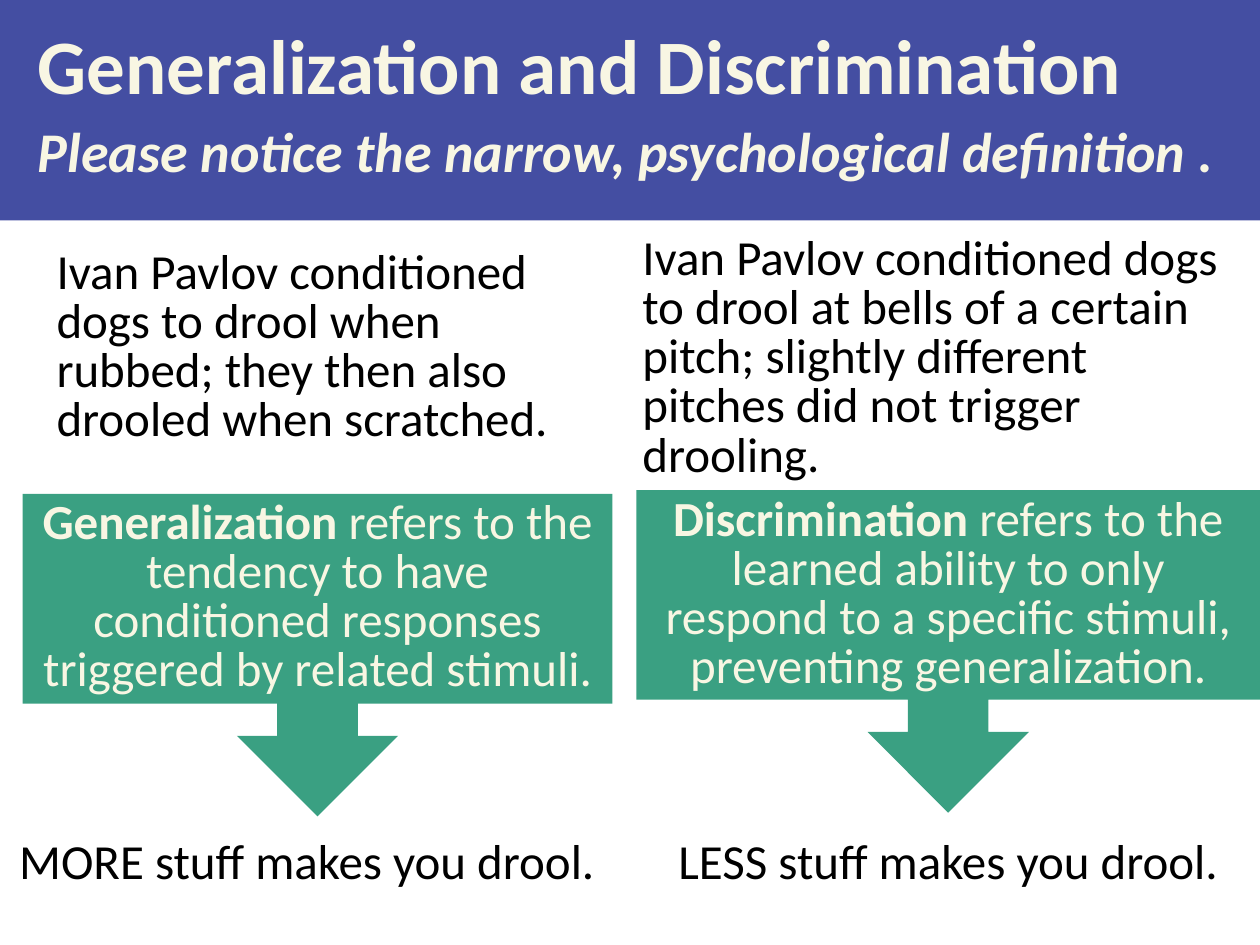
from dataclasses import dataclass

from pptx import Presentation
from pptx.dml.color import RGBColor
from pptx.enum.shapes import MSO_SHAPE
from pptx.enum.text import MSO_ANCHOR, MSO_AUTO_SIZE, PP_ALIGN
from pptx.shapes.autoshape import Shape
from pptx.slide import Slide
from pptx.util import Inches, Pt

BLUE = RGBColor(0x44, 0x4E, 0xA2)
GREEN = RGBColor(0x3A, 0xA0, 0x82)
CREAM = RGBColor(0xF8, 0xF6, 0xE3)
BLACK = RGBColor(0x00, 0x00, 0x00)
FONT = "Calibri"


@dataclass(frozen=True)
class Box:
    left: float
    top: float
    width: float
    height: float

    def lengths(self) -> tuple:
        return tuple(map(Inches, (self.left, self.top, self.width, self.height)))


@dataclass(frozen=True)
class TextPart:
    text: str
    size: float = 28
    bold: bool = False
    italic: bool = False


@dataclass(frozen=True)
class Concept:
    example: str
    example_box: Box
    term: str
    definition: str
    callout_box: Box
    result: str
    result_box: Box


CONCEPTS = [
    Concept(
        "Ivan Pavlov conditioned dogs to drool when rubbed; "
        "they then also drooled when scratched.",
        Box(0.35, 1.94, 4.42, 1.89),
        "Generalization ",
        "refers to the tendency to have conditioned responses "
        "triggered by related stimuli.",
        Box(0.18, 3.92, 4.68, 2.56),
        "MORE stuff makes you drool.",
        Box(0, 6.62, 4.87, 0.5),
    ),
    Concept(
        "Ivan Pavlov conditioned dogs to drool at bells of a certain pitch; "
        "slightly different pitches did not trigger drooling.",
        Box(5, 1.83, 4.83, 2.08),
        "Discrimination ",
        "refers to the learned ability to only respond to a specific stimuli, "
        "preventing generalization.",
        Box(5.05, 3.89, 4.95, 2.56),
        "LESS stuff makes you drool.",
        Box(5.14, 6.62, 4.77, 0.5),
    ),
]


def write_text(shape: Shape, parts: list[TextPart], color: RGBColor,
               alignment: PP_ALIGN, anchor: MSO_ANCHOR, line_spacing: float = 28) -> None:
    text_frame = shape.text_frame
    text_frame.word_wrap = True
    text_frame.auto_size = MSO_AUTO_SIZE.NONE
    text_frame.vertical_anchor = anchor
    paragraph = text_frame.paragraphs[0]
    paragraph.alignment = alignment
    paragraph.line_spacing = Pt(line_spacing)
    for part in parts:
        run = paragraph.add_run()
        run.text = part.text
        run.font.name = FONT
        run.font.size = Pt(part.size)
        run.font.bold = part.bold
        run.font.italic = part.italic
        run.font.color.rgb = color


def format_title(slide: Slide) -> None:
    title = slide.shapes.title
    title.left, title.top, title.width, title.height = Box(0, 0, 10, 1.75).lengths()
    title.fill.solid()
    title.fill.fore_color.rgb = BLUE
    title.text_frame.margin_left = Inches(0.3)
    parts = [
        TextPart("Generalization and Discrimination ", 44, bold=True),
        TextPart("Please notice the narrow, psychological definition .", 32,
                 bold=True, italic=True),
    ]
    write_text(title, parts, CREAM, PP_ALIGN.LEFT, MSO_ANCHOR.MIDDLE, line_spacing=42)


def add_plain_text(slide: Slide, text: str, box: Box, alignment: PP_ALIGN) -> None:
    text_box = slide.shapes.add_textbox(*box.lengths())
    write_text(text_box, [TextPart(text)], BLACK, alignment, MSO_ANCHOR.TOP)


def add_callout(slide: Slide, concept: Concept) -> None:
    callout = slide.shapes.add_shape(
        MSO_SHAPE.DOWN_ARROW_CALLOUT, *concept.callout_box.lengths())
    for index, value in enumerate((0.25, 0.25, 0.25, 0.65)):
        callout.adjustments[index] = value
    callout.shadow.inherit = False
    callout.fill.solid()
    callout.fill.fore_color.rgb = GREEN
    callout.line.fill.background()
    parts = [TextPart(concept.term, bold=True), TextPart(concept.definition)]
    write_text(callout, parts, CREAM, PP_ALIGN.CENTER, MSO_ANCHOR.MIDDLE)


def main() -> None:
    presentation = Presentation()
    presentation.slide_width = Inches(10)
    presentation.slide_height = Inches(7.5)
    slide = presentation.slides.add_slide(presentation.slide_layouts[5])
    format_title(slide)
    for concept in CONCEPTS:
        add_plain_text(slide, concept.example, concept.example_box, PP_ALIGN.LEFT)
        add_callout(slide, concept)
        add_plain_text(slide, concept.result, concept.result_box, PP_ALIGN.CENTER)
    presentation.save("out.pptx")


if __name__ == "__main__":
    main()
